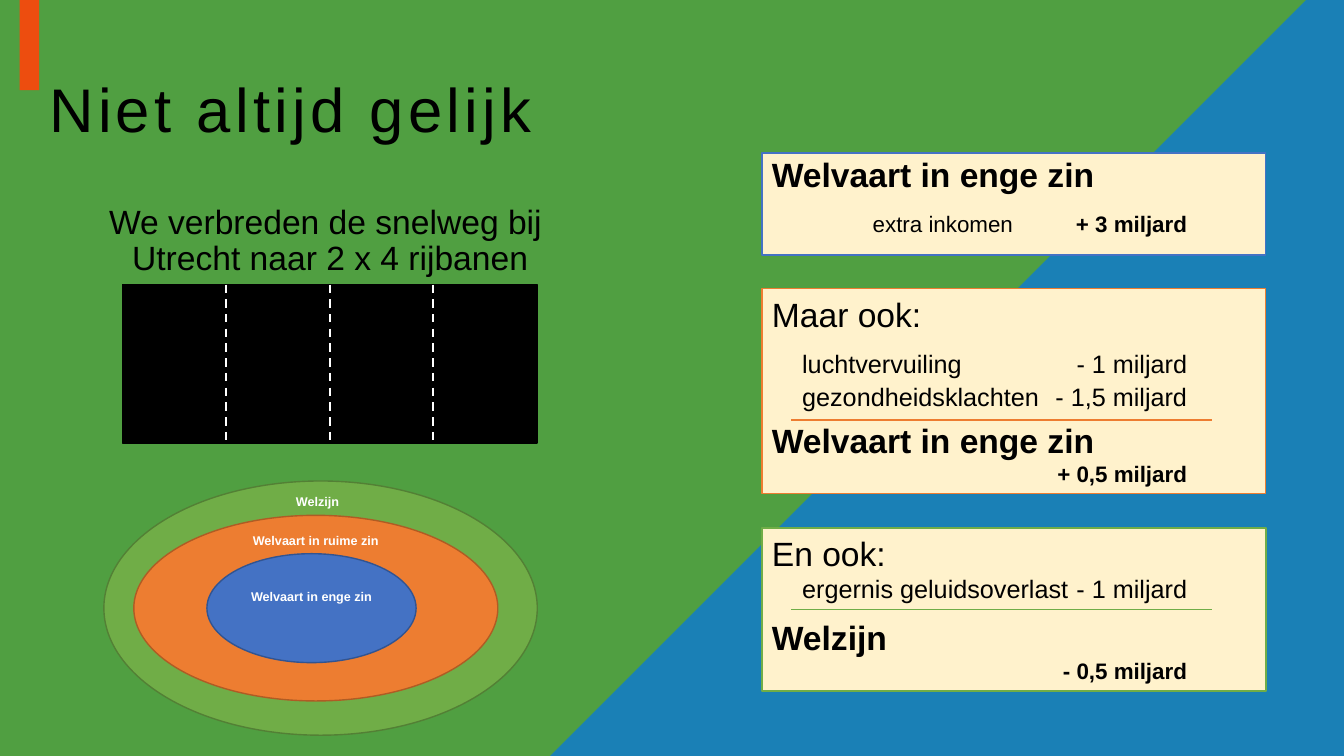
from dataclasses import dataclass
from typing import NamedTuple

from lxml.etree import SubElement
from pptx import Presentation
from pptx.dml.color import RGBColor
from pptx.enum.dml import MSO_LINE
from pptx.enum.shapes import MSO_CONNECTOR, MSO_SHAPE
from pptx.enum.text import MSO_ANCHOR, PP_ALIGN
from pptx.oxml.ns import qn
from pptx.util import Pt

WIDE, HIGH = 960, 540
BLACK, WHITE, CREAM = "000000", "FFFFFF", "FFF2CC"
GREEN, ORANGE, BLUE = "70AD47", "ED7D31", "4472C4"


class Run(NamedTuple):
    text: str
    size: float
    bold: bool = False
    color: str = BLACK


class Para(NamedTuple):
    runs: list[Run]
    tab: float = 21.6
    before: float = 0
    after: float = 0
    pitch: float = 1
    align: PP_ALIGN = PP_ALIGN.LEFT


class Box(NamedTuple):
    left: float
    top: float
    width: float
    height: float


@dataclass
class Card:
    box: Box
    line: str
    paras: list[Para]


@dataclass
class Ring:
    box: Box
    fill: str
    line: str


@dataclass
class Label:
    box: Box
    text: str


def tint(code: str) -> RGBColor:
    return RGBColor.from_string(code)


def write(frame, paras: list[Para]) -> None:
    frame.word_wrap = True
    for num, para in enumerate(paras):
        item = frame.paragraphs[0] if num == 0 else frame.add_paragraph()
        item.alignment = para.align
        item.line_spacing = para.pitch
        item.space_before, item.space_after = Pt(para.before), Pt(para.after)
        if any("\t" in run.text for run in para.runs):
            tabs = SubElement(item._p.get_or_add_pPr(), qn("a:tabLst"))
            for stop, side in ((para.tab, "l"), (296.6, "r")):
                SubElement(tabs, qn("a:tab"), pos=str(Pt(stop)), algn=side)
        for run in para.runs:
            for row, text in enumerate(run.text.split("\n")):
                if row:
                    item.add_line_break()
                part = item.add_run()
                part.text = text
                font = part.font
                font.name, font.size, font.bold = "Arial", Pt(run.size), run.bold
                font.color.rgb = tint(run.color)


def shape(shapes, kind: MSO_SHAPE, box: Box, fill: str, line: str = ""):
    item = shapes.add_shape(kind, *map(Pt, box))
    paint(item, fill, line)
    return item


def paint(item, fill: str, line: str = "") -> None:
    item.shadow.inherit = False
    item.fill.solid()
    item.fill.fore_color.rgb = tint(fill)
    if line:
        item.line.color.rgb = tint(line)
        item.line.width = Pt(1)
    else:
        item.line.fill.background()


def rule(shapes, x1: float, y1: float, x2: float, y2: float, color: str, width: float = 1):
    item = shapes.add_connector(MSO_CONNECTOR.STRAIGHT, *map(Pt, (x1, y1, x2, y2)))
    item.line.color.rgb = tint(color)
    item.line.width = Pt(width)
    SubElement(item._element.spPr, qn("a:effectLst"))
    return item


def label(shapes, box: Box, paras: list[Para]) -> None:
    write(shapes.add_textbox(*map(Pt, box)).text_frame, paras)


def backdrop(shapes) -> None:
    field = shape(shapes, MSO_SHAPE.RECTANGLE, Box(0, 0, WIDE, HIGH), "258812")
    color = field._element.spPr.find(".//" + qn("a:srgbClr"))
    SubElement(color, qn("a:alpha"), val="80000")
    pen = shapes.build_freeform(Pt(WIDE), Pt(0))
    pen.add_line_segments([(Pt(x), Pt(y)) for x, y in ((WIDE, HIGH), (393, HIGH), (933, 0))])
    paint(pen.convert_to_shape(), "1A80B6")
    shape(shapes, MSO_SHAPE.RECTANGLE, Box(14, 0, 14, 64.5), "ED4D0F")


def road(shapes, box: Box, lanes: int) -> None:
    group = shapes.add_group_shape().shapes
    deck = shape(group, MSO_SHAPE.RECTANGLE, box, BLACK, BLACK)
    for lane in range(1, lanes):
        x = box.left + box.width * lane / lanes
        dash = rule(group, x, box.top, x, box.top + box.height, WHITE, 1.5)
        dash.line.dash_style = MSO_LINE.DASH
        if lane * 2 == lanes:
            dash.begin_connect(deck, 0)
            dash.end_connect(deck, 2)


def center(text: str) -> Para:
    return Para([Run(text, 9, True, WHITE)], align=PP_ALIGN.CENTER)


CARDS = [
    Card(Box(544.3, 109.4, 359.6, 72.7), BLUE, [
        Para([Run("Welvaart in enge zin", 24, True)], pitch=0.9),
        Para([Run("\t", 20), Run("extra inkomen\t", 16), Run("+ 3 miljard", 16, True)],
             tab=72, before=10, pitch=0.9),
    ]),
    Card(Box(544.3, 206.2, 359.6, 146.2), ORANGE, [
        Para([Run("Maar ook:", 24)]),
        Para([Run("\t", 28), Run("luchtvervuiling\t- 1 miljard", 18)]),
        Para([Run("\tgezondheidsklachten\t- 1,5 miljard", 18)], after=6),
        Para([Run("Welvaart in enge zin", 24, True)]),
        Para([Run("\t\t", 16), Run("+ 0,5 miljard", 16, True)]),
    ]),
    Card(Box(544.3, 377.3, 360, 116.4), GREEN, [
        Para([Run("En ook:", 24)]),
        Para([Run("\tergernis geluidsoverlast\t - 1 miljard", 18)], after=9.5),
        Para([Run("Welzijn", 24, True)]),
        Para([Run("\t\t", 16), Run("- 0,5 miljard", 16, True)]),
    ]),
]
RINGS = [
    Ring(Box(74.2, 343.6, 309.6, 181.6), GREEN, "538035"),
    Ring(Box(95.6, 368.1, 260, 132.6), ORANGE, "AF5C24"),
    Ring(Box(147.8, 395.5, 149.4, 77.8), BLUE, "325491"),
]
LABELS = [
    Label(Box(169.7, 377, 111.6, 18), "Welvaart in ruime zin"),
    Label(Box(196.8, 349.2, 60, 18), "Welzijn"),
]


def main() -> None:
    deck = Presentation()
    deck.slide_width, deck.slide_height = Pt(WIDE), Pt(HIGH)
    slide = deck.slides.add_slide(deck.slide_layouts[5])
    shapes = slide.shapes
    title = shapes.title
    backdrop(shapes)

    shapes._spTree.append(title._element)
    title.left, title.top, title.width, title.height = map(Pt, (28.1, 28.1, 908, 104.4))
    title.text_frame.vertical_anchor = MSO_ANCHOR.MIDDLE
    write(title.text_frame, [Para([Run("Niet altijd gelijk", 44)], pitch=0.9)])
    for run in title.text_frame.paragraphs[0].runs:
        run._r.get_or_add_rPr().set("spc", "300")

    lead = "We verbreden de snelweg bij \nUtrecht naar 2 x 4 rijbanen"
    label(shapes, Box(28.1, 143.3, 415.4, 342.7),
          [Para([Run(lead, 24)], pitch=0.9, align=PP_ALIGN.CENTER)])
    road(shapes, Box(87.6, 203.3, 296, 113.2), 4)

    for card in CARDS:
        item = shape(shapes, MSO_SHAPE.RECTANGLE, card.box, CREAM, card.line)
        item.text_frame.vertical_anchor = MSO_ANCHOR.TOP
        write(item.text_frame, card.paras)
    for y, color in ((300, ORANGE), (435.4, GREEN)):
        rule(shapes, 565.2, y, 865.6, y, color)

    for ring in RINGS:
        core = shape(shapes, MSO_SHAPE.OVAL, ring.box, ring.fill, ring.line)
    core.text_frame.vertical_anchor = MSO_ANCHOR.MIDDLE
    core.text_frame.margin_bottom = Pt(19.7)
    write(core.text_frame, [center("Welvaart in enge zin")])
    for tag in LABELS:
        label(shapes, tag.box, [center(tag.text)])

    deck.save("out.pptx")


if __name__ == "__main__":
    main()
